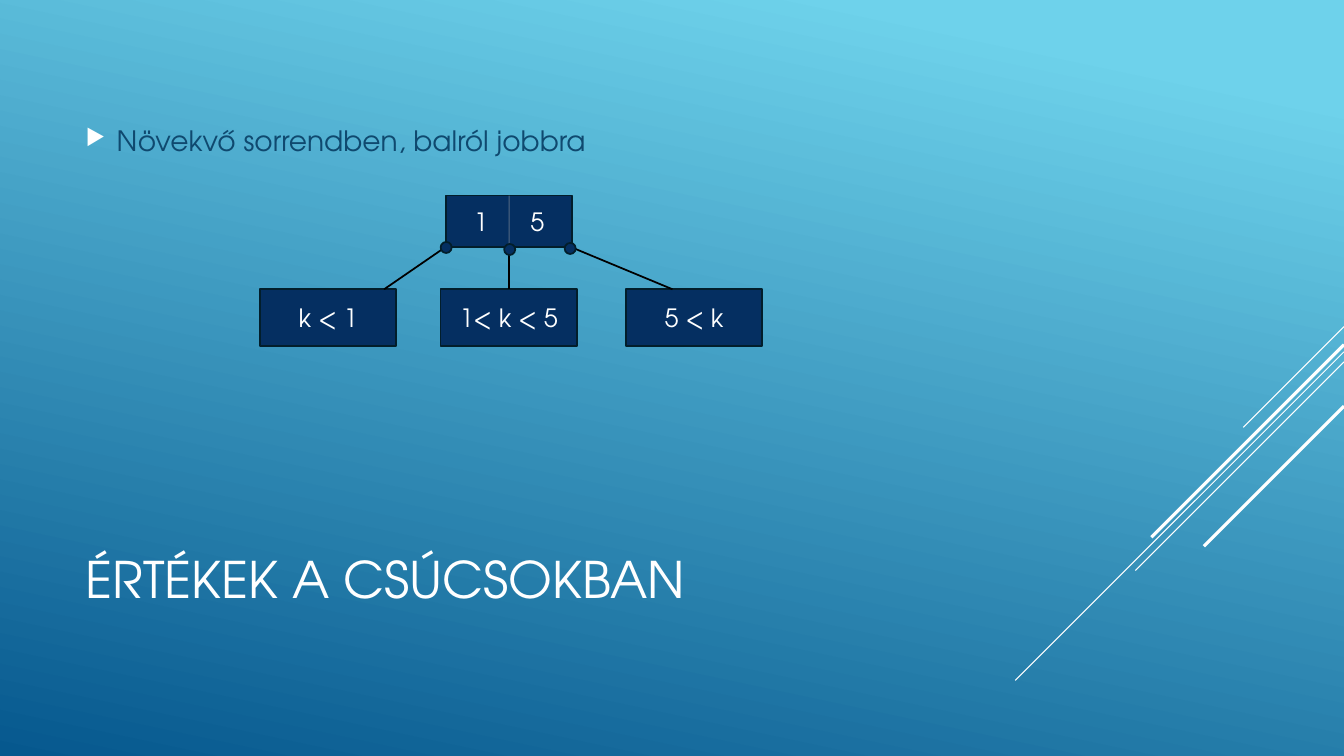
from lxml import etree
from pptx import Presentation, util as u
from pptx.dml.color import RGBColor
from pptx.enum import shapes, text
from pptx.oxml.ns import qn

# Content
TITLE = "ÉRTÉKEK A CSÚCSOKBAN"
BULLET = "Növekvő sorrendben, balról jobbra"
KEYS = ("1", "5")
# child text, left edge, line start x, line end x, dot left and top
CHILDREN = [
    ("k < 1", 2.58, 4.42, 3.81, (4.37, 2.40)),
    ("1< k < 5", 4.37, 5.05, 5.05, (5.00, 2.42)),
    ("5 < k", 6.21, 5.66, 6.67, (5.60, 2.41)),
]
# diagonals at the right edge: start y, horizontal run, width
STRIPES = [(3.24, 1.0, 0.75), (3.49, 3.26, 0.75), (3.59, 2.07, 0.75),
           (3.42, 1.91, 2.25), (4.03, 1.39, 2.25)]

FONT = "TeX Gyre Adventor"
C = {"light": "6ED2EB", "deep": "06588E", "white": "FFFFFF", "body": "0F496F",
     "node": "052F61", "edge": "021E2B", "link": "000000", "divider": "89919C"}
W, H = 13.33, 7.5
ROOT = (4.42, 1.94, 1.25, 0.51)
CHILD_TOP, CHILD_W, CHILD_H = 2.87, 1.35, 0.56
DOT = 0.11

prs = Presentation()
prs.slide_width, prs.slide_height = u.Inches(W), u.Inches(H)
s = prs.slides.add_slide(prs.slide_layouts[6])


def rgb(name):
    return RGBColor.from_string(C[name])


def write(sp, words, size, color):
    tf = sp.text_frame
    tf.word_wrap = True
    tf.vertical_anchor = text.MSO_ANCHOR.MIDDLE
    p = tf.paragraphs[0]
    p.text = words
    for r in p.runs:
        r.font.name, r.font.size = FONT, u.Pt(size)
        r.font.color.rgb = rgb(color)
    return p


def line(x1, y1, x2, y2, color, width):
    cn = s.shapes.add_connector(shapes.MSO_CONNECTOR.STRAIGHT,
                                *map(u.Inches, (x1, y1, x2, y2)))
    cn.line.color.rgb, cn.line.width = rgb(color), u.Pt(width)
    etree.SubElement(cn._element.spPr, qn("a:effectLst"))
    return cn


def node(kind, *box):
    sp = s.shapes.add_shape(kind, *map(u.Inches, box))
    sp.shadow.inherit = False
    sp.fill.solid()
    sp.fill.fore_color.rgb = rgb("node")
    sp.line.color.rgb, sp.line.width = rgb("edge"), u.Pt(1.25)
    return sp


def textbox(*box):
    return s.shapes.add_textbox(*map(u.Inches, box))


# Background
fill = s.background.fill
fill.gradient()
fill.gradient_angle = 360 - 102
for stop, position, color in zip(fill.gradient_stops, (0.1, 1), ("light", "deep")):
    stop.position, stop.color.rgb = position, rgb(color)

# Diagonal stripes
for y, run, width in STRIPES:
    line(W, y, W - run, y + run, "white", width)

# Title and bullet
write(textbox(0.75, 4.91, 9.33, 1.65), TITLE, 36, "white")
p = write(textbox(0.75, 1.14, 9.33, 0.5), BULLET, 20, "body")
pPr = p._p.get_or_add_pPr()
pPr.set("marL", str(u.Inches(0.31)))
pPr.set("indent", str(-u.Inches(0.31)))
color = etree.SubElement(pPr, qn("a:buClr"))
etree.SubElement(color, qn("a:srgbClr"), val=C["white"])
etree.SubElement(pPr, qn("a:buSzPct"), val="80000")
etree.SubElement(pPr, qn("a:buChar"), char="▶")

# Root node: each key is centred on its own tab stop
RECT = shapes.MSO_SHAPE.RECTANGLE
root = node(RECT, *ROOT)
root.text_frame.margin_left = root.text_frame.margin_right = 0
p = write(root, "".join("\t" + key for key in KEYS), 18, "white")
p.alignment = text.PP_ALIGN.LEFT
tabs = etree.SubElement(p._p.get_or_add_pPr(), qn("a:tabLst"))
for x in (0.35, 0.91):
    etree.SubElement(tabs, qn("a:tab"), pos=str(u.Inches(x)), algn="ctr")
root_bottom = ROOT[1] + ROOT[3]
divider = line(5.05, ROOT[1], 5.05, root_bottom, "divider", 0.75)
srgb = divider.line._ln.find(".//" + qn("a:srgbClr"))
etree.SubElement(srgb, qn("a:alpha"), val="60000")

# Child nodes, then links, then dots on top
for words, left, *_ in CHILDREN:
    p = write(node(RECT, left, CHILD_TOP, CHILD_W, CHILD_H), words, 18, "white")
    p.alignment = text.PP_ALIGN.CENTER
for _, _, x1, x2, _ in CHILDREN:
    line(x1, root_bottom, x2, CHILD_TOP, "link", 1.25)
for *_, dot in CHILDREN:
    node(shapes.MSO_SHAPE.OVAL, *dot, DOT, DOT)

prs.save("out.pptx")
